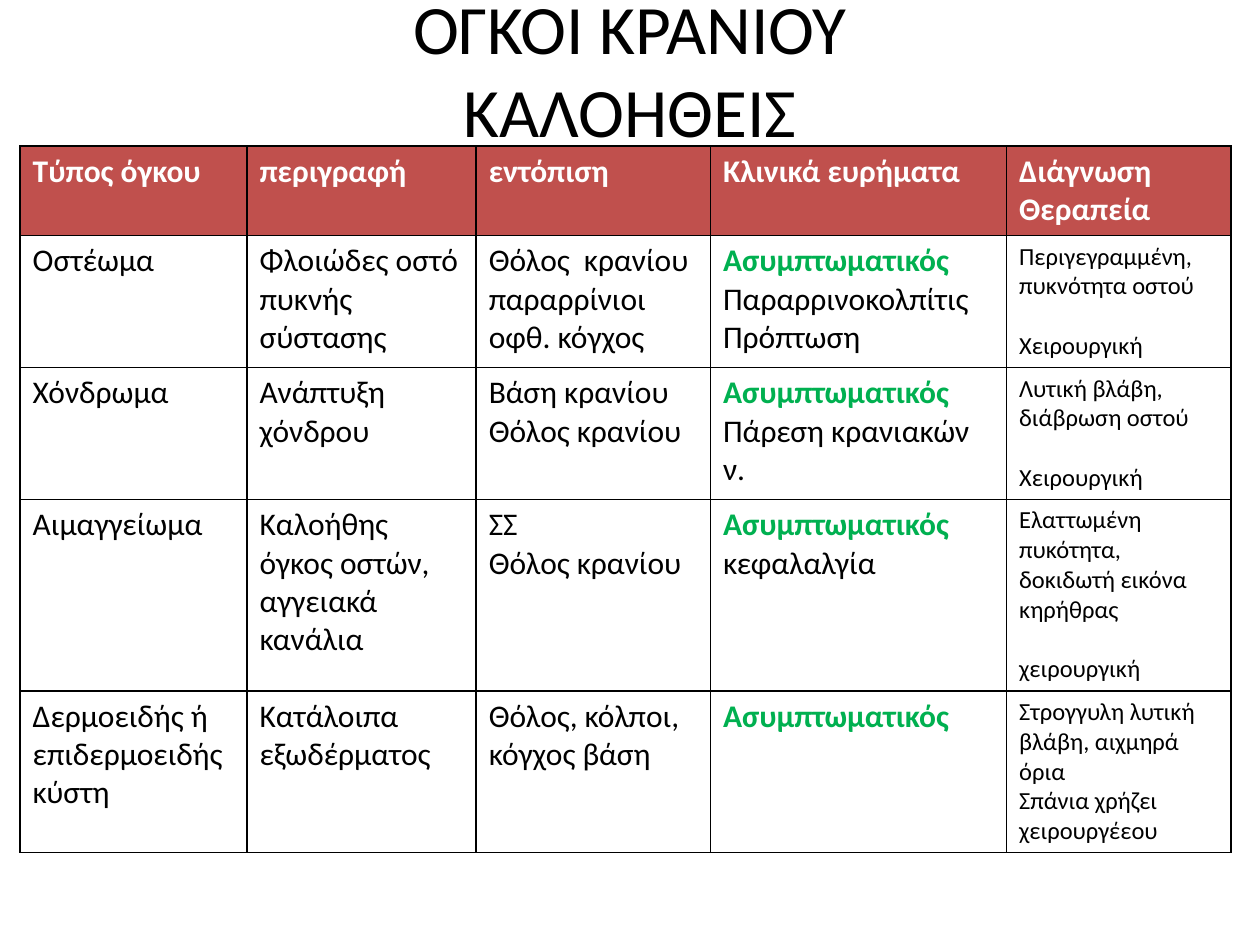
"""Build a slide with a table of benign skull tumours."""
from pptx import Presentation
from pptx.dml.color import RGBColor
from pptx.enum.text import MSO_ANCHOR, PP_ALIGN
from pptx.oxml.ns import qn
from pptx.util import Pt
from lxml import etree

CENTER = PP_ALIGN.CENTER
LEFT = PP_ALIGN.LEFT
MIDDLE = MSO_ANCHOR.MIDDLE
BLACK = RGBColor(0x00, 0x00, 0x00)
WHITE = RGBColor(0xFF, 0xFF, 0xFF)
RED = RGBColor(0xC0, 0x50, 0x4D)
GREEN = RGBColor(0x00, 0xB0, 0x50)
FONT = "Calibri"

SYMPTOM_FREE = "Ασυμπτωματικός"
DIAGNOSIS_COLUMN = 4
TREATMENT_GAP = 17
COLUMN_WIDTHS = [129.6, 131, 133.9, 169.2, 128.2]
ROW_HEIGHTS = [51.1, 75.4, 75.4, 109.4, 92.4]
HEADINGS = [["Τύπος όγκου"], ["περιγραφή"], ["εντόπιση"],
            ["Κλινικά ευρήματα"], ["Διάγνωση", "Θεραπεία"]]
TUMOURS = [
    [["Οστέωμα"], ["Φλοιώδες οστό πυκνής σύστασης"],
     ["Θόλος  κρανίου", "παραρρίνιοι", "οφθ. κόγχος"],
     [SYMPTOM_FREE, "Παραρρινοκολπίτις", "Πρόπτωση"],
     ["Περιγεγραμμένη, πυκνότητα οστού", "Χειρουργική"]],
    [["Χόνδρωμα"], ["Ανάπτυξη χόνδρου"],
     ["Βάση κρανίου", "Θόλος κρανίου"],
     [SYMPTOM_FREE, "Πάρεση κρανιακών ν."],
     ["Λυτική βλάβη, διάβρωση οστού", "Χειρουργική"]],
    [["Αιμαγγείωμα"], ["Καλοήθης όγκος οστών, αγγειακά κανάλια"],
     ["ΣΣ", "Θόλος κρανίου"],
     [SYMPTOM_FREE, "κεφαλαλγία"],
     ["Ελαττωμένη πυκότητα, δοκιδωτή εικόνα κηρήθρας", "χειρουργική"]],
    [["Δερμοειδής ή επιδερμοειδής κύστη"], ["Κατάλοιπα εξωδέρματος"],
     ["Θόλος, κόλποι, κόγχος βάση"],
     [SYMPTOM_FREE],
     ["Στρογγυλη λυτική βλάβη, αιχμηρά όρια", "Σπάνια χρήζει χειρουργέεου"]],
]


def write(paragraph, text, size=18, color=BLACK, bold=False, align=LEFT, before=0):
    paragraph.alignment = align
    if before:
        paragraph.space_before = Pt(before)
    for number, line in enumerate(text.split("\n")):
        if number:
            paragraph.add_line_break()
        run = paragraph.add_run()
        run.text = line
        run.font.name = FONT
        run.font.size = Pt(size)
        run.font.bold = bold
        run.font.color.rgb = color


class SlideBuilder:
    def __init__(self, slide, border=BLACK, border_width=1):
        self.slide = slide
        self.border = border
        self.border_width = border_width

    def title(self, text, left, top, width, height):
        box = self.slide.shapes.add_textbox(Pt(left), Pt(top), Pt(width), Pt(height))
        frame = box.text_frame
        frame.word_wrap = True
        frame.vertical_anchor = MIDDLE
        write(frame.paragraphs[0], text, size=39.6, align=CENTER)

    def outline(self, cell):
        properties = cell._tc.get_or_add_tcPr()
        for side in ("a:lnL", "a:lnR", "a:lnT", "a:lnB"):
            line = etree.SubElement(properties, qn(side), w=str(Pt(self.border_width)))
            fill = etree.SubElement(line, qn("a:solidFill"))
            etree.SubElement(fill, qn("a:srgbClr"), val=str(self.border))

    def cell(self, cell, texts, fill=None, gap=0, **style):
        self.outline(cell)
        if fill is None:
            cell.fill.background()
        else:
            cell.fill.solid()
            cell.fill.fore_color.rgb = fill
        frame = cell.text_frame
        for number, text in enumerate(texts):
            paragraph = frame.add_paragraph() if number else frame.paragraphs[0]
            look = dict(style, color=GREEN, bold=True) if text == SYMPTOM_FREE else style
            write(paragraph, text, before=gap if number else 0, **look)

    def table(self, left, top, headings, tumours):
        table = self.slide.shapes.add_table(
            len(ROW_HEIGHTS), len(COLUMN_WIDTHS), Pt(left), Pt(top),
            Pt(sum(COLUMN_WIDTHS)), Pt(sum(ROW_HEIGHTS))).table
        table.horz_banding = False
        for column, width in zip(table.columns, COLUMN_WIDTHS):
            column.width = Pt(width)
        for row, height in zip(table.rows, ROW_HEIGHTS):
            row.height = Pt(height)
        for column, heading in enumerate(headings):
            self.cell(table.cell(0, column), heading, fill=RED, color=WHITE, bold=True)
        for row, tumour in enumerate(tumours, start=1):
            for column, texts in enumerate(tumour):
                is_diagnosis = column == DIAGNOSIS_COLUMN
                has_gap = is_diagnosis and row < len(tumours)
                self.cell(table.cell(row, column), texts,
                          gap=TREATMENT_GAP if has_gap else 0,
                          size=14 if is_diagnosis else 18)


def main():
    presentation = Presentation()
    presentation.slide_width = Pt(720)
    presentation.slide_height = Pt(540)
    builder = SlideBuilder(presentation.slides.add_slide(presentation.slide_layouts[6]))
    builder.title("ΟΓΚΟΙ ΚΡΑΝΙΟΥ\nΚΑΛΟΗΘΕΙΣ", 36, 21.6, 648, 34.6)
    builder.table(11.5, 83.5, HEADINGS, TUMOURS)
    presentation.save("out.pptx")


if __name__ == "__main__":
    main()
